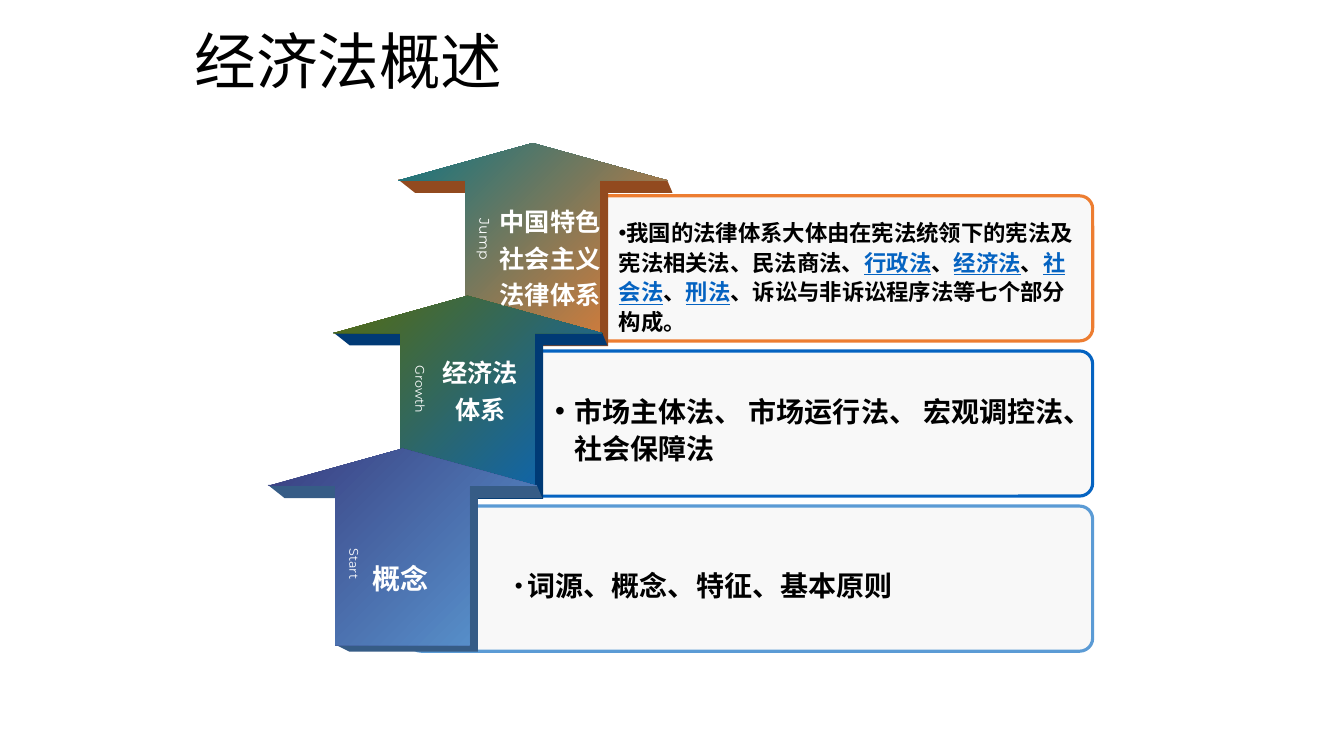
from dataclasses import dataclass

from lxml.etree import SubElement
from pptx import Presentation
from pptx.dml.color import RGBColor
from pptx.enum.shapes import MSO_SHAPE
from pptx.enum.text import MSO_ANCHOR, MSO_AUTO_SIZE, PP_ALIGN
from pptx.oxml.ns import qn
from pptx.util import Pt


@dataclass(frozen=True)
class Theme:
    body_font: str = "Calibri"
    caption_font: str = "Montserrat"
    black: str = "000000"
    white: str = "FFFFFF"
    link: str = "0563C1"
    panel: str = "F8F8F8"
    title_size: int = 44
    large: int = 20
    label_size: int = 18
    small: int = 16


THEME = Theme()

# Outline of an arrow's thick side, measured from the arrow's top left corner
SIDE_OUTLINE = [(0, 26), (192, 26), (196, 35.5), (150, 35.5), (150, 145),
                (58, 145), (48, 140), (48, 35.5), (12, 35.5)]
ARROW_WIDTH, ARROW_HEIGHT = 192.2, 140.4
PANEL_RIGHT, PANEL_HEIGHT = 780.5, 103.7

# Levels from top to bottom: panel left, accent, gradient start, side colour
LEVELS = [
    (355, "ED7D31", "127481", "924A1F"),
    (345, "0563C1", "556B10", "003A75"),
    (291.6, "5B9BD5", "393D7F", "365C86"),
]

# Captions: text, left, top, width, height, size
CAPTIONS = [
    ("Growth", 264.2, 269.3, 72, 18, 9),
    ("Start", 226.1, 393.8, 54, 18, 9),
    ("Jump", 313.9, 159.8, 61.9, 22.3, 10),
]


class SlideBuilder:
    def __init__(self, presentation, theme):
        self.theme = theme
        self.slide = presentation.slides.add_slide(presentation.slide_layouts[6])

    def panel(self, left, top, width, height, accent):
        shape = self.slide.shapes.add_shape(
            MSO_SHAPE.ROUNDED_RECTANGLE, Pt(left), Pt(top), Pt(width), Pt(height))
        shape.adjustments[0] = 0.09
        shape.shadow.inherit = False
        shape.fill.solid()
        shape.fill.fore_color.rgb = RGBColor.from_string(self.theme.panel)
        shape.line.color.rgb = RGBColor.from_string(accent)
        shape.line.width = Pt(2.25)

    def arrow_side(self, left, top, color):
        points = [(Pt(left + x), Pt(top + y)) for x, y in SIDE_OUTLINE]
        builder = self.slide.shapes.build_freeform(*points[0])
        builder.add_line_segments(points[1:], close=True)
        shape = builder.convert_to_shape()
        shape.shadow.inherit = False
        shape.fill.solid()
        shape.fill.fore_color.rgb = RGBColor.from_string(color)
        shape.line.fill.background()

    def arrow(self, left, top, colors):
        shape = self.slide.shapes.add_shape(
            MSO_SHAPE.UP_ARROW, Pt(left), Pt(top), Pt(ARROW_WIDTH), Pt(ARROW_HEIGHT))
        shape.adjustments[0] = 0.5
        shape.adjustments[1] = 0.19
        shape.shadow.inherit = False
        shape.line.fill.background()
        shape.fill.gradient()
        shape.fill.gradient_angle = 315
        for stop, color in zip(shape.fill.gradient_stops, colors):
            stop.color.rgb = RGBColor.from_string(color)

    def text(self, left, top, width, height, runs, size, color, font=None,
             bold=True, align=PP_ALIGN.LEFT, spacing=1.0, wrap=True, rotation=0,
             anchor=MSO_ANCHOR.TOP, grow=False, bullet=False, hanging=0):
        """Each run is (text, overrides), with size and link as overrides."""
        shape = self.slide.shapes.add_textbox(Pt(left), Pt(top), Pt(width), Pt(height))
        shape.rotation = rotation
        frame = shape.text_frame
        frame.word_wrap = wrap
        frame.vertical_anchor = anchor
        frame.auto_size = MSO_AUTO_SIZE.SHAPE_TO_FIT_TEXT if grow else MSO_AUTO_SIZE.NONE
        paragraph = frame.paragraphs[0]
        paragraph.alignment = align
        paragraph.line_spacing = spacing
        if bullet:
            self.bullet(paragraph, hanging)
        for content, overrides in runs:
            run = paragraph.add_run()
            run.text = content
            run.font.name = font or self.theme.body_font
            run.font.size = Pt(overrides.get("size", size))
            run.font.bold = bold
            linked = overrides.get("link", False)
            run.font.underline = linked
            run.font.color.rgb = RGBColor.from_string(self.theme.link if linked else color)

    def bullet(self, paragraph, hanging):
        properties = paragraph._p.get_or_add_pPr()
        properties.set("marL", str(Pt(hanging)))
        properties.set("indent", str(-Pt(hanging)))
        SubElement(properties, qn("a:buFont")).set("typeface", "Arial")
        SubElement(properties, qn("a:buChar")).set("char", "•")

    def caption(self, content, left, top, width, height, size):
        self.text(left, top, width, height, [(content, {})], size, self.theme.white,
                  font=self.theme.caption_font, bold=False, align=PP_ALIGN.CENTER,
                  wrap=False, rotation=90)

    def label(self, content, left, top, width, height, size, align=PP_ALIGN.LEFT):
        self.text(left, top, width, height, [(content, {})], size, self.theme.white,
                  align=align, spacing=1.2, grow=True)

    def detail(self, left, top, width, height, runs, size, hanging=0):
        self.text(left, top, width, height, runs, size, self.theme.black,
                  spacing=1.1, grow=True, bullet=True, hanging=hanging)


def main():
    presentation = Presentation()
    presentation.slide_width = Pt(960)
    presentation.slide_height = Pt(540)
    builder = SlideBuilder(presentation, THEME)

    # Stacked panels and arrows
    for index, (panel_left, accent, start, side) in enumerate(LEVELS):
        arrow_left, arrow_top = 284.4 - 46.5 * index, 102.2 + 109.1 * index
        builder.panel(panel_left, 139.9 + 110.8 * index,
                      PANEL_RIGHT - panel_left, PANEL_HEIGHT, accent)
        builder.arrow_side(arrow_left, arrow_top, side)
        builder.arrow(arrow_left, arrow_top, (start, accent))

    # Vertical captions and arrow labels
    for caption in CAPTIONS:
        builder.caption(*caption)
    builder.label("中国特色社会主义法律体系", 349.9, 139.7, 88.6, 85, THEME.label_size)
    builder.label("经济法体系", 304.6, 247.7, 77, 59, THEME.label_size, PP_ALIGN.CENTER)
    builder.label("概念", 259.2, 393, 69.8, 37.6, THEME.large)

    # Panel details
    legal_system = [("我国的法律体系大体由在宪法统领下的宪法及宪法相关法、民法商法、", {})]
    for branch, following in [("行政法", "、"), ("经济法", "、"), ("社会法", "、"),
                              ("刑法", "、诉讼与非诉讼程序法等七个部分构成。")]:
        legal_system += [(branch, {"link": True}), (following, {})]
    builder.detail(434.9, 151.2, 345.6, 94.3, legal_system, THEME.small)
    builder.detail(389.5, 275.8, 396.7, 59.8,
                   [(" 市场主体法、 市场运行法、 宏观调控法、 社会保障法", {})],
                   THEME.large, hanging=9)
    builder.detail(360.7, 400.3, 351.4, 33.8,
                   [(" ", {"size": THEME.small}), ("词源、概念、特征、基本原则", {})],
                   THEME.large)

    # Title
    builder.text(120.2, 20.2, 257.8, 44.6, [("经济法概述", {})], THEME.title_size,
                 THEME.black, bold=False, align=PP_ALIGN.CENTER, anchor=MSO_ANCHOR.MIDDLE)

    presentation.save("out.pptx")


if __name__ == "__main__":
    main()
